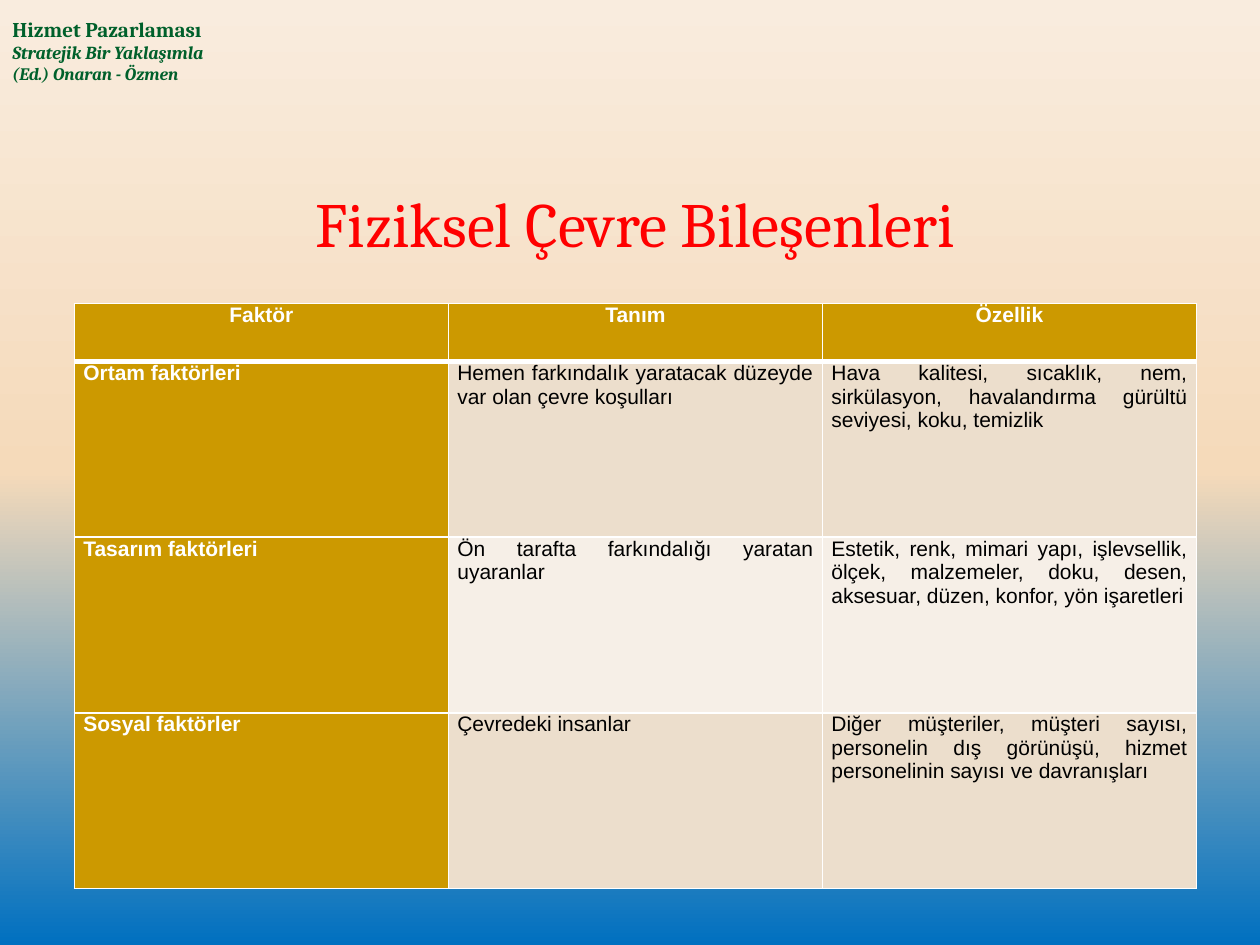
from dataclasses import dataclass

import pptx
import pptx.dml.color
import pptx.enum.text
import pptx.oxml
import pptx.oxml.ns
import pptx.util
from pptx.util import Cm

ALIGN = pptx.enum.text.PP_ALIGN
ANCHOR = pptx.enum.text.MSO_ANCHOR


@dataclass(frozen=True)
class Theme:
    heading_font: str = "Cambria"
    body_font: str = "Arial"
    green: str = "00602B"
    red: str = "FF0000"
    gold: str = "CC9900"
    white: str = "FFFFFF"
    black: str = "000000"
    bands: tuple = ("ECDECC", "F6EFE7")
    background: tuple = ((0, "0070C0"), (50, "F5DABA"), (100, "F9ECDE"))
    title_size: float = 36
    body_size: float = 12
    subtitle_size: float = 10.5
    editor_size: float = 10


THEME = Theme()

HEADERS = ("Faktör", "Tanım", "Özellik")
FACTORS = (
    ("Ortam faktörleri",
     "Hemen farkındalık yaratacak düzeyde var olan çevre koşulları",
     "Hava kalitesi, sıcaklık, nem, sirkülasyon, havalandırma gürültü "
     "seviyesi, koku, temizlik"),
    ("Tasarım faktörleri",
     "Ön tarafta farkındalığı yaratan uyaranlar",
     "Estetik, renk, mimari yapı, işlevsellik, ölçek, malzemeler, doku, "
     "desen, aksesuar, düzen, konfor, yön işaretleri"),
    ("Sosyal faktörler",
     "Çevredeki insanlar",
     "Diğer müşteriler, müşteri sayısı, personelin dış görünüşü, hizmet "
     "personelinin sayısı ve davranışları"),
)


def write_text(paragraph, text, *, font, size, color, bold=False, italic=False,
               align=ALIGN.LEFT):
    paragraph.alignment = align
    run = paragraph.add_run()
    run.text = text
    run.font.name = font
    run.font.size = pptx.util.Pt(size)
    run.font.bold = bold
    run.font.italic = italic
    run.font.color.rgb = pptx.dml.color.RGBColor.from_string(color)


def add_text_frame(slide, left, top, width, height, anchor=ANCHOR.TOP):
    frame = slide.shapes.add_textbox(left, top, width, height).text_frame
    frame.word_wrap = True
    frame.vertical_anchor = anchor
    return frame


def paint_background(slide):
    """Fill the slide with a gradient that rises from the bottom edge."""
    fill = slide.background.fill
    fill.gradient()
    fill.gradient_angle = 90
    stops = slide.background._cSld.find(".//" + pptx.oxml.ns.qn("a:gsLst"))
    for stop in list(stops):
        stops.remove(stop)
    for position, color in THEME.background:
        stops.append(pptx.oxml.parse_xml(
            f'<a:gs {pptx.oxml.ns.nsdecls("a")} pos="{position * 1000}">'
            f'<a:srgbClr val="{color}"/></a:gs>'))


def add_book_heading(slide, left, top, width, height):
    frame = add_text_frame(slide, left, top, width, height)
    lines = (
        ("Hizmet Pazarlaması", THEME.body_size, False),
        ("Stratejik Bir Yaklaşımla", THEME.subtitle_size, True),
        ("(Ed.) Onaran - Özmen", THEME.editor_size, True),
    )
    for index, (text, size, italic) in enumerate(lines):
        paragraph = frame.add_paragraph() if index else frame.paragraphs[0]
        write_text(paragraph, text, font=THEME.heading_font, size=size,
                   color=THEME.green, bold=True, italic=italic)


def add_title(slide, left, top, width, height):
    frame = add_text_frame(slide, left, top, width, height, ANCHOR.BOTTOM)
    write_text(frame.paragraphs[0], "Fiziksel Çevre Bileşenleri",
               font=THEME.heading_font, size=THEME.title_size,
               color=THEME.red, align=ALIGN.CENTER)


def set_borders(cell, **widths):
    """Draw white borders; widths are points keyed by side: L, R, T, B."""
    properties = cell._tc.get_or_add_tcPr()
    for index, side in enumerate("LRTB"):
        properties.insert(index, pptx.oxml.parse_xml(
            f'<a:ln{side} {pptx.oxml.ns.nsdecls("a")} '
            f'w="{pptx.util.Pt(widths.get(side, 1))}"><a:solidFill>'
            f'<a:srgbClr val="{THEME.white}"/></a:solidFill></a:ln{side}>'))


def fill_cell(cell, text, *, fill, color, bold, align):
    cell.margin_left = cell.margin_right = Cm(0.18)
    cell.margin_top = cell.margin_bottom = 0
    cell.fill.solid()
    cell.fill.fore_color.rgb = pptx.dml.color.RGBColor.from_string(fill)
    write_text(cell.text_frame.paragraphs[0], text, font=THEME.body_font,
               size=THEME.body_size, color=color, bold=bold, align=align)


def add_factor_table(slide, left, top, width, height):
    rows = (HEADERS,) + FACTORS
    table = slide.shapes.add_table(
        len(rows), len(HEADERS), left, top, width, height).table
    for column in table.columns:
        column.width = width // len(HEADERS)
    header_height = Cm(1.17)
    for index, row in enumerate(table.rows):
        row.height = ((height - header_height) // len(FACTORS) if index
                      else header_height)

    for row_index, texts in enumerate(rows):
        is_header = row_index == 0
        for column_index, text in enumerate(texts):
            cell = table.cell(row_index, column_index)
            emphasised = is_header or column_index == 0
            band = THEME.bands[(row_index - 1) % len(THEME.bands)]
            fill_cell(cell, text,
                      fill=THEME.gold if emphasised else band,
                      color=THEME.white if emphasised else THEME.black,
                      bold=emphasised,
                      align=ALIGN.CENTER if is_header else ALIGN.JUSTIFY)
            set_borders(cell, B=3 if is_header else 1,
                        T=3 if row_index == 1 else 1)


def main():
    presentation = pptx.Presentation()
    presentation.slide_width = Cm(25.4)
    presentation.slide_height = Cm(19.05)
    slide = presentation.slides.add_slide(presentation.slide_layouts[6])
    paint_background(slide)
    add_book_heading(slide, Cm(0), Cm(0.2), Cm(7.14), Cm(1.65))
    add_title(slide, Cm(3.38), Cm(2.79), Cm(18.85), Cm(2.57))
    add_factor_table(slide, Cm(1.5), Cm(6.12), Cm(22.62), Cm(11.79))
    presentation.save("out.pptx")


if __name__ == "__main__":
    main()
